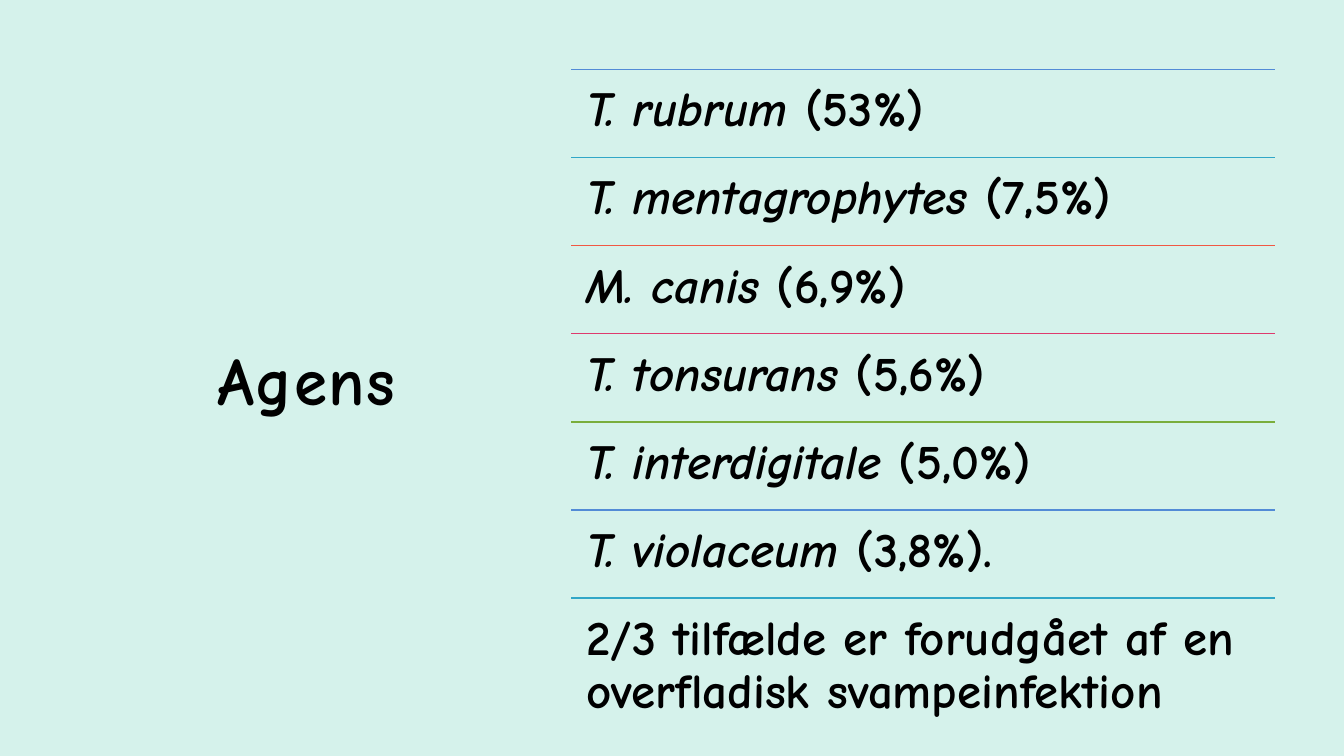
import dataclasses
import typing

import pptx
import pptx.dml.color
import pptx.enum.shapes
import pptx.enum.text
import pptx.oxml
import pptx.oxml.ns
import pptx.util

Cm = pptx.util.Cm
Pt = pptx.util.Pt
Anchor = pptx.enum.text.MSO_ANCHOR
Align = pptx.enum.text.PP_ALIGN


@dataclasses.dataclass(frozen=True)
class Theme:
    font: str = "Comic Neue"
    ground: str = "D5F2EB"
    ink: str = "000000"
    blue: str = "528BD6"
    teal: str = "31A7C7"
    orange: str = "F15843"
    pink: str = "DE3A6D"
    green: str = "7AAE3C"
    title: int = 48
    body: int = 35
    rule: int = 1


@dataclasses.dataclass(frozen=True)
class Row:
    color: str
    name: str
    rest: str


THEME = Theme()
LEFT, TOP, WIDTH, PITCH = 14.4, 1.75, 17.73, 2.22
INSET = Cm(0.38)
ROWS = [
    Row(THEME.blue, "T. rubrum", " (53%)"),
    Row(THEME.teal, "T. mentagrophytes", " (7,5%)"),
    Row(THEME.orange, "M. canis", " (6,9%)"),
    Row(THEME.pink, "T. tonsurans", " (5,6%)"),
    Row(THEME.green, "T. interdigitale", " (5,0%)"),
    Row(THEME.blue, "T. violaceum", " (3,8%)."),
    Row(THEME.teal, "", "2/3 tilfælde er forudgået af en overfladisk svampeinfektion"),
]
FRAME = {
    "word_wrap": True,
    "auto_size": pptx.enum.text.MSO_AUTO_SIZE.NONE,
    "vertical_anchor": Anchor.TOP,
    "margin_left": INSET,
    "margin_top": INSET,
    "margin_right": INSET,
    "margin_bottom": INSET,
}


def format_with(thing: typing.Any, values: dict[str, typing.Any]) -> None:
    for key, value in values.items():
        setattr(thing, key, value)


def tint(text: str) -> pptx.dml.color.RGBColor:
    return pptx.dml.color.RGBColor.from_string(text)


def add_run(para: typing.Any, text: str, size: int, slant: bool = False) -> typing.Any:
    run = para.add_run()
    run.text = text
    format_with(run.font, {"name": THEME.font, "size": Pt(size), "bold": True, "italic": slant})
    run.font.color.rgb = tint(THEME.ink)
    return run


def draw_title(slide: typing.Any, text: str) -> None:
    title = slide.shapes.title
    format_with(title, {"left": Cm(2.46), "top": Cm(2.72), "width": Cm(10.52), "height": Cm(13.64)})
    format_with(title.text_frame, {"word_wrap": True, "vertical_anchor": Anchor.MIDDLE})
    para = title.text_frame.paragraphs[0]
    para.alignment = Align.CENTER
    run = add_run(para, text, THEME.title)
    run.font._element.set("spc", "100")


def draw_rule(slide: typing.Any, top: float, color: str) -> None:
    rule = slide.shapes.add_connector(
        pptx.enum.shapes.MSO_CONNECTOR.STRAIGHT, Cm(LEFT), Cm(top), Cm(LEFT + WIDTH), Cm(top)
    )
    rule.line.color.rgb = tint(color)
    rule.line.width = Pt(THEME.rule)
    shape_props = rule._element.spPr
    shape_props.append(pptx.oxml.parse_xml(f"<a:effectLst {pptx.oxml.ns.nsdecls('a')}/>"))


def draw_row(slide: typing.Any, row: Row, top: float) -> None:
    draw_rule(slide, top, row.color)
    box = slide.shapes.add_textbox(Cm(LEFT), Cm(top), Cm(WIDTH), Cm(PITCH))
    format_with(box.text_frame, FRAME)
    para = box.text_frame.paragraphs[0]
    format_with(para, {"alignment": Align.LEFT, "line_spacing": 0.9})
    if row.name:
        add_run(para, row.name, THEME.body, slant=True)
    add_run(para, row.rest, THEME.body)


def main() -> None:
    deck = pptx.Presentation()
    format_with(deck, {"slide_width": Cm(33.87), "slide_height": Cm(19.05)})
    slide = deck.slides.add_slide(deck.slide_layouts.get_by_name("Title Only"))
    ground = slide.background.fill
    ground.solid()
    ground.fore_color.rgb = tint(THEME.ground)
    draw_title(slide, "Agens")
    for index, row in enumerate(ROWS):
        draw_row(slide, row, TOP + index * PITCH)
    deck.save("out.pptx")


if __name__ == "__main__":
    main()
